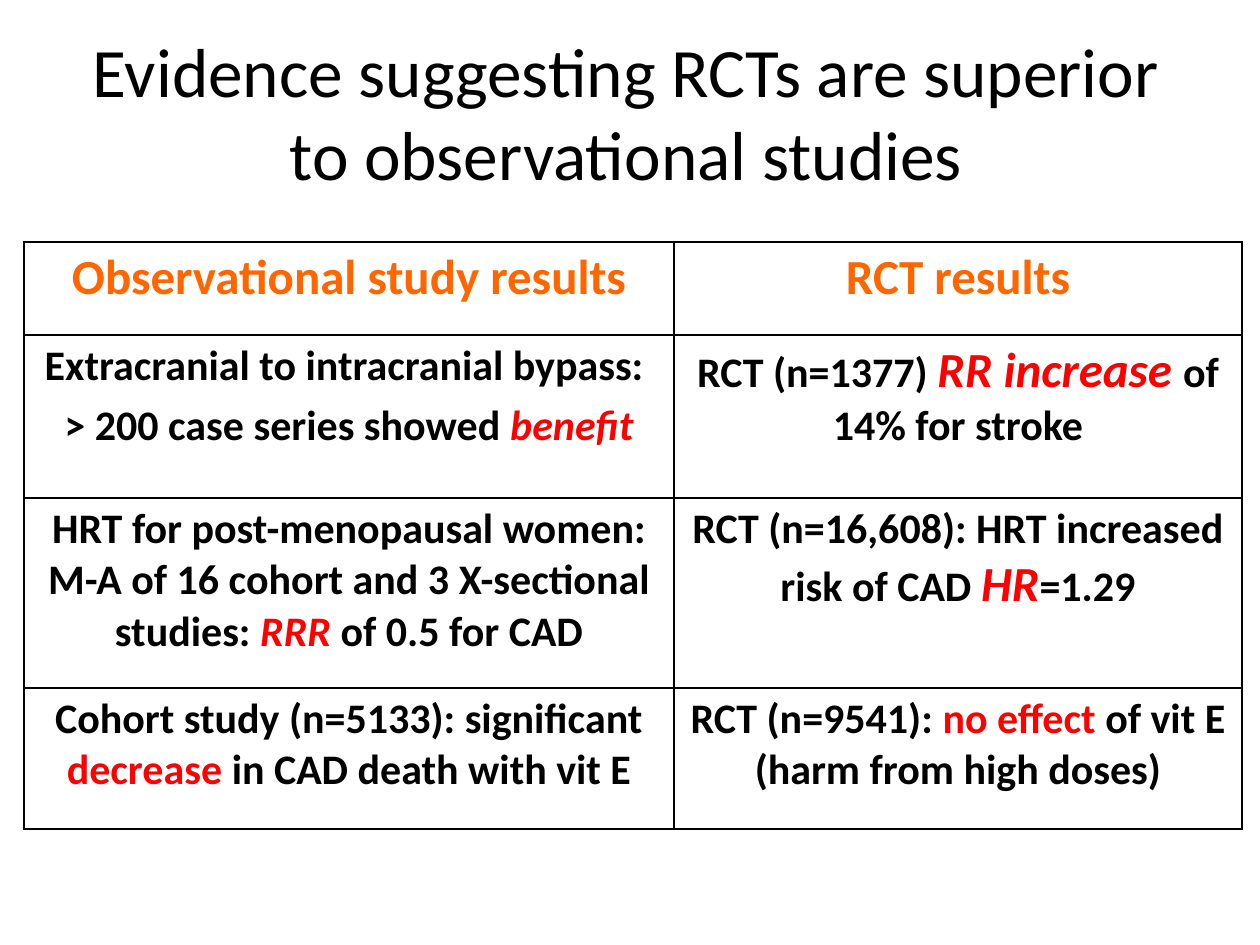
from lxml.etree import SubElement
from pptx import Presentation
from pptx.dml.color import RGBColor
from pptx.enum.text import MSO_ANCHOR, PP_ALIGN
from pptx.oxml.ns import qn
from pptx.util import Pt

EMU_PER_PX = 914400 / 126
BLACK, ORANGE, RED = "000000", "FF6600", "FF0000"
BODY = {"size": Pt(24), "bold": True}
HEADING = {"size": Pt(28), "bold": True, "color": ORANGE}
ALERT = {**BODY, "color": RED}
STRESS = {**ALERT, "italic": True}
BIG_STRESS = {**STRESS, "size": Pt(28)}

TITLE = "Evidence suggesting RCTs are superior to observational studies"
COLUMNS = [650, 568]
ROWS = [93, 163, 190, 141]
RESULTS = [
    [
        [[("Observational study results", HEADING)]],
        [[("RCT results", HEADING)]],
    ],
    [
        [
            [("Extracranial to intracranial bypass: ", BODY)],
            [("> 200 case series showed ", BODY), ("benefit", STRESS)],
        ],
        [[("RCT (n=1377) ", BODY), ("RR increase ", BIG_STRESS),
          ("of 14% for stroke", BODY)]],
    ],
    [
        [[("HRT for post-menopausal women: M-A of 16 cohort and 3 "
           "X-sectional studies: ", BODY),
          ("RRR ", STRESS), ("of 0.5 for CAD", BODY)]],
        [[("RCT (n=16,608): HRT increased risk of CAD ", BODY),
          ("HR", BIG_STRESS), ("=1.29", BODY)]],
    ],
    [
        [[("Cohort study (n=5133): significant ", BODY),
          ("decrease ", ALERT), ("in CAD death with vit E", BODY)]],
        [[("RCT (n=9541): ", BODY), ("no effect ", ALERT),
          ("of vit E (harm from high doses)", BODY)]],
    ],
]


def px(length):
    return round(length * EMU_PER_PX)


def rgb(value):
    return RGBColor.from_string(value)


def write_runs(paragraph, runs):
    paragraph.alignment = PP_ALIGN.CENTER
    for wording, style in runs:
        run = paragraph.add_run()
        run.text = wording
        settings = {"name": "Calibri", **style}
        run.font.color.rgb = rgb(settings.pop("color", BLACK))
        for attribute, value in settings.items():
            setattr(run.font, attribute, value)


def border_cell(cell):
    properties = cell._tc.get_or_add_tcPr()
    for position, side in enumerate(("lnL", "lnR", "lnT", "lnB")):
        edge = properties.makeelement(qn(f"a:{side}"), {"w": str(Pt(1))})
        fill = SubElement(edge, qn("a:solidFill"))
        SubElement(fill, qn("a:srgbClr"), val=BLACK)
        properties.insert(position, edge)


def fill_cell(cell, paragraphs):
    margins = {"margin_left": 12, "margin_right": 12,
               "margin_top": 6, "margin_bottom": 6}
    for attribute, length in margins.items():
        setattr(cell, attribute, px(length))
    cell.fill.background()
    border_cell(cell)
    frame = cell.text_frame
    for index, runs in enumerate(paragraphs):
        paragraph = frame.add_paragraph() if index else frame.paragraphs[0]
        if index:
            paragraph.space_before = Pt(4.8)
        write_runs(paragraph, runs)


def add_title(slide, left, top, width, height):
    box = slide.shapes.add_textbox(px(left), px(top), px(width), px(height))
    frame = box.text_frame
    frame.word_wrap = True
    frame.vertical_anchor = MSO_ANCHOR.MIDDLE
    write_runs(frame.paragraphs[0], [(TITLE, {"size": Pt(39.6)})])


def add_results(slide, left, top):
    table = slide.shapes.add_table(
        len(ROWS), len(COLUMNS), px(left), px(top),
        px(sum(COLUMNS)), px(sum(ROWS))).table
    table.first_row = table.horz_banding = False
    for column, width in zip(table.columns, COLUMNS):
        column.width = px(width)
    for row, height, contents in zip(table.rows, ROWS, RESULTS):
        row.height = px(height)
        for cell, paragraphs in zip(row.cells, contents):
            fill_cell(cell, paragraphs)


def main():
    deck = Presentation()
    deck.slide_width, deck.slide_height = px(1260), px(945)
    slide = deck.slides.add_slide(deck.slide_layouts[6])
    add_title(slide, 52, 32, 1148, 158)
    add_results(slide, 24, 242)
    deck.save("out.pptx")


if __name__ == "__main__":
    main()
